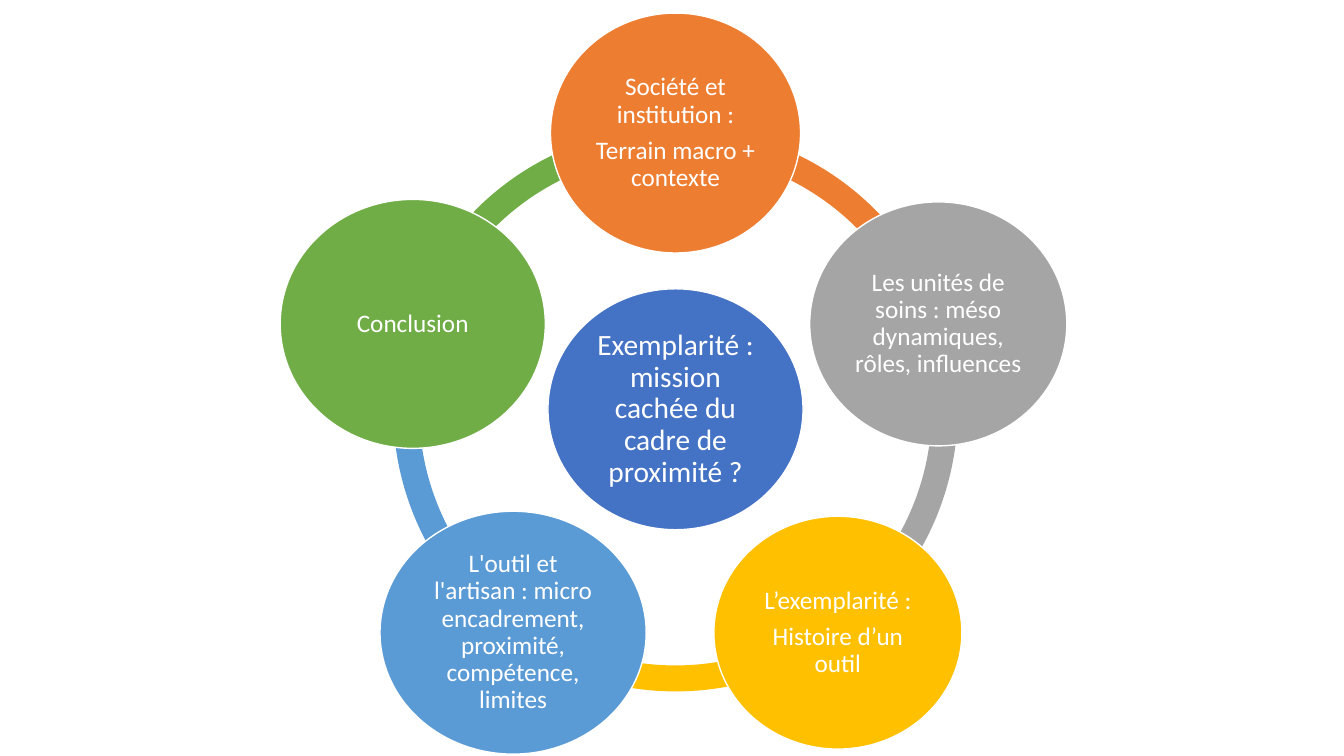
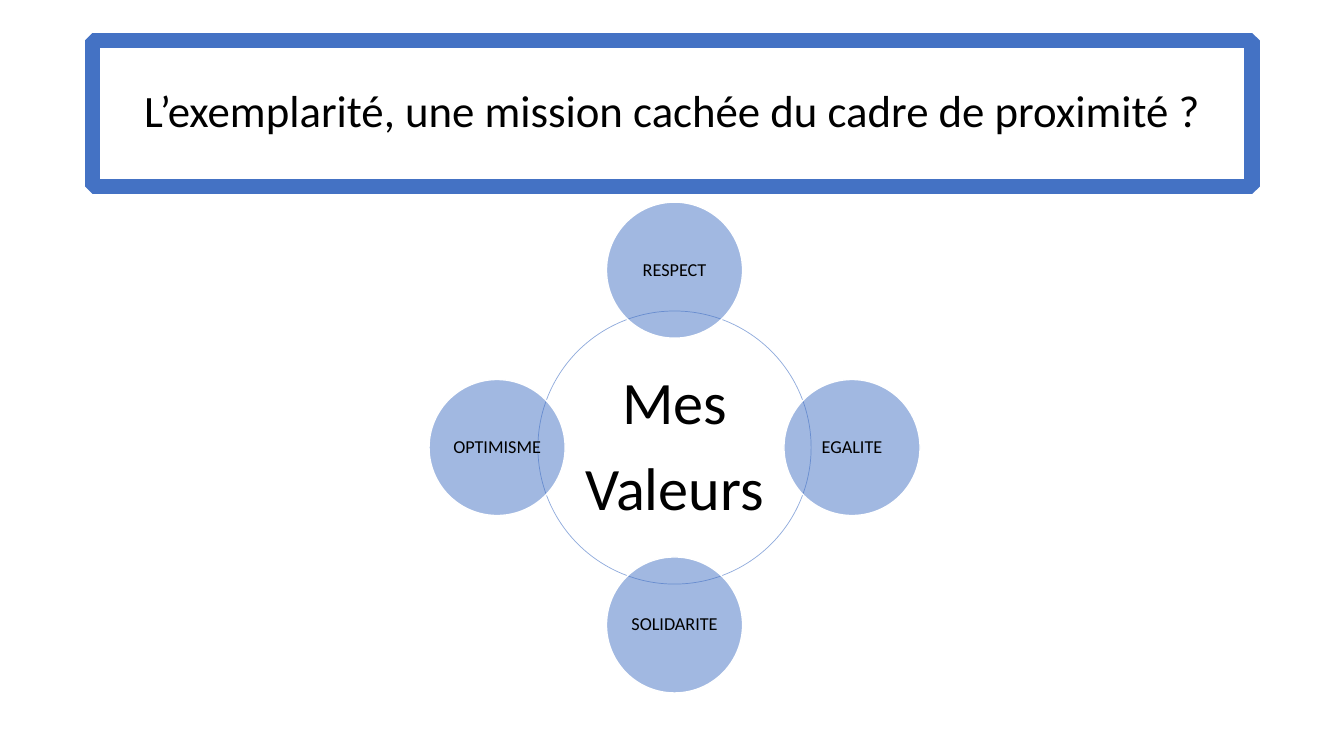
from math import cos, radians, sin

from lxml import etree
from pptx import Presentation
from pptx.dml.color import RGBColor
from pptx.enum.shapes import MSO_SHAPE
from pptx.enum.text import MSO_ANCHOR, PP_ALIGN
from pptx.oxml.ns import qn
from pptx.util import Pt

PX = 9144
FONT = "Calibri"
OVAL, ARC, RECT = MSO_SHAPE.OVAL, MSO_SHAPE.BLOCK_ARC, MSO_SHAPE.RECTANGLE
CENTER, MIDDLE = PP_ALIGN.CENTER, MSO_ANCHOR.MIDDLE

COLORS = {
    "white": "FFFFFF",
    "black": "000000",
    "blue": "4472C4",
    "pale": "8FAADC",
    "orange": "ED7D31",
    "grey": "A5A5A5",
    "yellow": "FFC000",
    "sky": "5B9BD5",
    "green": "70AD47",
}

PLAN_CENTER, PLAN_RADIUS, RING_RADIUS = (670, 406), 274, 280
PLAN_HUB = ("Exemplarité : mission cachée du cadre de proximité ?",)
PLAN_STEPS = [
    (("Société et institution :", "Terrain macro + contexte"), "orange", 248, 238),
    (("Les unités de soins : méso dynamiques, rôles, influences",), "grey", 255, 242),
    (("L’exemplarité :", "Histoire d’un outil"), "yellow", 246, 231),
    (("L'outil et l'artisan : micro encadrement, proximité, compétence, limites",),
     "sky", 264, 241),
    (("Conclusion",), "green", 263, 247),
]

TITLE = ("L’exemplarité, une mission cachée du cadre de proximité ?",)
VALUES_CENTER, VALUES_RADIUS = (669, 444), 176
VALUES_HUB = ("Mes", "Valeurs")
VALUES = ["RESPECT", "EGALITE", "SOLIDARITE", "OPTIMISME"]


def rgb(name):
    return RGBColor.from_string(COLORS[name])


def add_shape(slide, kind, x, y, w, h, fill, line=None, weight=1, alpha=None):
    sp = slide.shapes.add_shape(kind, *(round(v * PX) for v in (x, y, w, h)))
    sp.shadow.inherit = False
    sp.fill.solid()
    sp.fill.fore_color.rgb = rgb(fill)
    if alpha:
        clr = sp.fill._xPr.find(qn("a:solidFill")).find(qn("a:srgbClr"))
        etree.SubElement(clr, qn("a:alpha")).set("val", str(alpha * 1000))
    if line:
        sp.line.color.rgb = rgb(line)
        sp.line.width = Pt(weight)
    else:
        sp.line.fill.background()
    return sp


def write(sp, paragraphs, size, color="white", inset=3):
    tf = sp.text_frame
    tf.word_wrap = True
    tf.vertical_anchor = MIDDLE
    tf.margin_left = tf.margin_right = tf.margin_top = tf.margin_bottom = inset * PX
    for i, text in enumerate(paragraphs):
        p = tf.add_paragraph() if i else tf.paragraphs[0]
        p.alignment = CENTER
        p.line_spacing = 0.9
        p.space_before = Pt(round(size * 0.35, 1) if i else 0)
        r = p.add_run()
        r.text = text
        r.font.size = Pt(size)
        r.font.name = FONT
        r.font.color.rgb = rgb(color)


def add_circle(slide, center, w, h, paragraphs, size, fill,
               line="white", weight=1, alpha=None, color="white", inset=3):
    sp = add_shape(slide, OVAL, center[0] - w / 2, center[1] - h / 2, w, h,
                   fill, line, weight, alpha)
    write(sp, paragraphs, size, color, inset)


def angles(count):
    return [(270 + 360 * i / count) % 360 for i in range(count)]


def orbit(center, radius, angle):
    a = radians(angle)
    return center[0] + radius * cos(a), center[1] + radius * sin(a)


def build_plan(slide):
    cx, cy = PLAN_CENTER
    steps = list(zip(angles(len(PLAN_STEPS)), PLAN_STEPS))
    for angle, (_, color, _, _) in steps:
        arc = add_shape(slide, ARC, cx - RING_RADIUS, cy - RING_RADIUS,
                        2 * RING_RADIUS, 2 * RING_RADIUS, color)
        end = (angle + 360 / len(steps)) % 360
        arc.adjustments[0] = angle * 0.6
        arc.adjustments[1] = end * 0.6
        arc.adjustments[2] = 0.046
    add_circle(slide, PLAN_CENTER, 253, 239, PLAN_HUB, 21, "blue")
    for angle, (paragraphs, color, w, h) in steps:
        add_circle(slide, orbit(PLAN_CENTER, PLAN_RADIUS, angle), w, h,
                   paragraphs, 18, color)


def build_values(slide):
    title = add_shape(slide, RECT, 92, 40, 1150, 145, "white", "blue", 11)
    etree.SubElement(title.line._get_or_add_ln(), qn("a:bevel"))
    write(title, TITLE, 32, "black", 10)
    add_circle(slide, VALUES_CENTER, 271, 271, VALUES_HUB, 43, "white",
               line="pale", weight=0.5, alpha=50, color="black")
    for angle, value in zip(angles(len(VALUES)), VALUES):
        add_circle(slide, orbit(VALUES_CENTER, VALUES_RADIUS, angle), 135, 135,
                   (value,), 13, "blue", alpha=50, color="black", inset=2)


def main():
    prs = Presentation()
    prs.slide_width, prs.slide_height = 1333 * PX, 750 * PX
    for build in (build_plan, build_values):
        build(prs.slides.add_slide(prs.slide_layouts[6]))
    prs.save("out.pptx")


if __name__ == "__main__":
    main()
